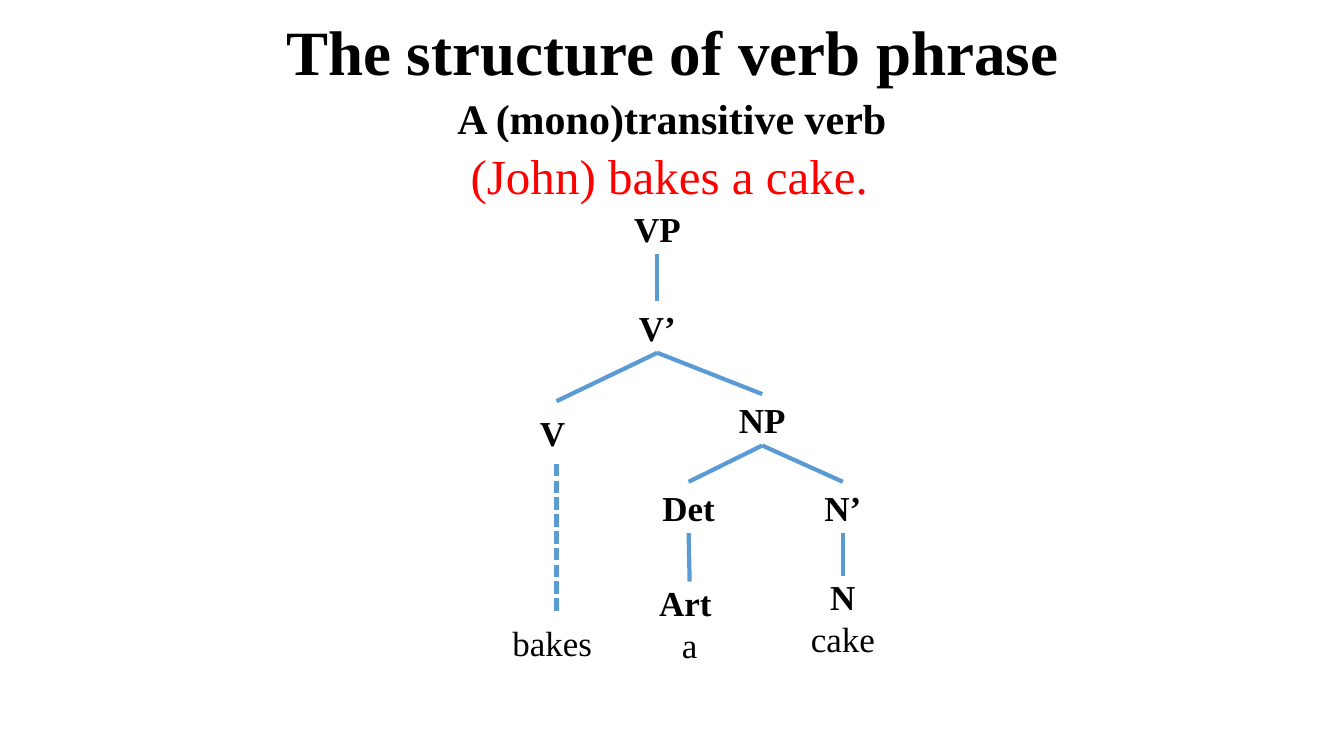
from dataclasses import dataclass

from lxml.etree import SubElement
from pptx import Presentation
from pptx.dml.color import RGBColor as RGB
from pptx.enum.dml import MSO_LINE
from pptx.enum.shapes import MSO_CONNECTOR as CONN, MSO_SHAPE as SHAPE
from pptx.enum.text import MSO_ANCHOR as ANCHOR, PP_ALIGN as ALIGN
from pptx.oxml.ns import qn
from pptx.util import Inches, Pt

COLS, ROWS = 13.33, 7.5  # square grid cells
BOTTOM, TOP = 2, 0  # connection sites


@dataclass(frozen=True)
class Theme:
    font: str = "Times New Roman"
    text: RGB = RGB(0, 0, 0)
    example: RGB = RGB(255, 0, 0)
    branch: RGB = RGB(0x5B, 0x9B, 0xD5)
    paper: RGB = RGB(255, 255, 255)
    title_size: int = 45
    subtitle_size: int = 30
    example_size: int = 35
    node_size: int = 25
    branch_width: int = 3


class TreeSlide:
    def __init__(self, prs, theme):
        self.theme = theme
        self.cell_w, self.cell_h = prs.slide_width / COLS, prs.slide_height / ROWS
        self.s = prs.slides.add_slide(prs.slide_layouts[5])

    def box(self, col, row, cols, rows):
        return [round(n) for n in (col * self.cell_w, row * self.cell_h,
                                   cols * self.cell_w, rows * self.cell_h)]

    def set_text(self, tf, *lines, size, color=None, bold=True, anchor=ANCHOR.MIDDLE,
                 spacing=None):
        """Fill a frame with centred lines; only the first one may be bold."""
        tf.word_wrap, tf.vertical_anchor = True, anchor
        for i, line in enumerate(lines):
            p = tf.add_paragraph() if i else tf.paragraphs[0]
            p.alignment, p.line_spacing = ALIGN.CENTER, spacing
            r = p.add_run()
            r.text = line
            font = r.font
            font.name, font.size = self.theme.font, Pt(size)
            font.bold = bold and i == 0
            font.color.rgb = color or self.theme.text

    def title(self, text, *area):
        sp = self.s.shapes.title
        sp.left, sp.top, sp.width, sp.height = self.box(*area)
        self.set_text(sp.text_frame, text, size=self.theme.title_size, spacing=0.9)

    def text(self, *lines, area, **fmt):
        sp = self.s.shapes.add_textbox(*self.box(*area))
        self.set_text(sp.text_frame, *lines, **fmt)
        return sp

    def example(self, text, *area):
        sp = self.s.shapes.add_shape(SHAPE.RECTANGLE, *self.box(*area))
        sp.shadow.inherit = False
        sp.fill.solid()
        sp.fill.fore_color.rgb = self.theme.paper
        sp.line.fill.background()
        self.set_text(sp.text_frame, text, size=self.theme.example_size,
                      color=self.theme.example, bold=False)

    def node(self, *lines, center, top, cols=0.87, rows=0.51, bold=True):
        return self.text(*lines, area=(center - cols / 2, top, cols, rows),
                         size=self.theme.node_size, bold=bold)

    def branch(self, parent, child, dashed=False):
        line = self.s.shapes.add_connector(CONN.STRAIGHT, 0, 0, 0, 0)
        line.begin_connect(parent, BOTTOM)
        line.end_connect(child, TOP)
        line.line.color.rgb = self.theme.branch
        line.line.width = Pt(self.theme.branch_width)
        if dashed:
            line.line.dash_style = MSO_LINE.SQUARE_DOT
        SubElement(line._element.spPr, qn("a:effectLst"))


def main():
    prs = Presentation()
    prs.slide_width, prs.slide_height = Inches(COLS), Inches(ROWS)
    theme = Theme()
    slide = TreeSlide(prs, theme)

    slide.title("The structure of verb phrase", 0.92, 0.2, 11.5, 0.7)
    slide.text("A (mono)transitive verb", area=(0.48, 0.93, 12.37, 0.5),
               size=theme.subtitle_size, anchor=ANCHOR.TOP, spacing=0.9)
    slide.example("(John) bakes a cake.", 4.55, 1.41, 4.18, 0.65)

    vp = slide.node("VP", center=6.52, top=2.01)
    v_bar = slide.node("V’", center=6.52, top=2.99)
    v = slide.node("V ", center=5.52, top=3.98, cols=1.11, rows=0.62)
    np = slide.node("NP", center=7.56, top=3.91)
    det = slide.node("Det", center=6.83, top=4.78)
    n_bar = slide.node("N’", center=8.36, top=4.78)
    art = slide.node("Art ", "a", center=6.84, top=5.77, cols=1.3, rows=0.83)
    n = slide.node("N", "cake", center=8.36, top=5.71, cols=1.3, rows=0.83)
    bakes = slide.node("bakes ", center=5.52, top=6.06, cols=1.11, rows=0.63,
                       bold=False)

    for parent, child in [(vp, v_bar), (v_bar, v), (v_bar, np), (np, det),
                          (np, n_bar), (det, art), (n_bar, n)]:
        slide.branch(parent, child)
    slide.branch(v, bakes, dashed=True)

    prs.save("out.pptx")


if __name__ == "__main__":
    main()
